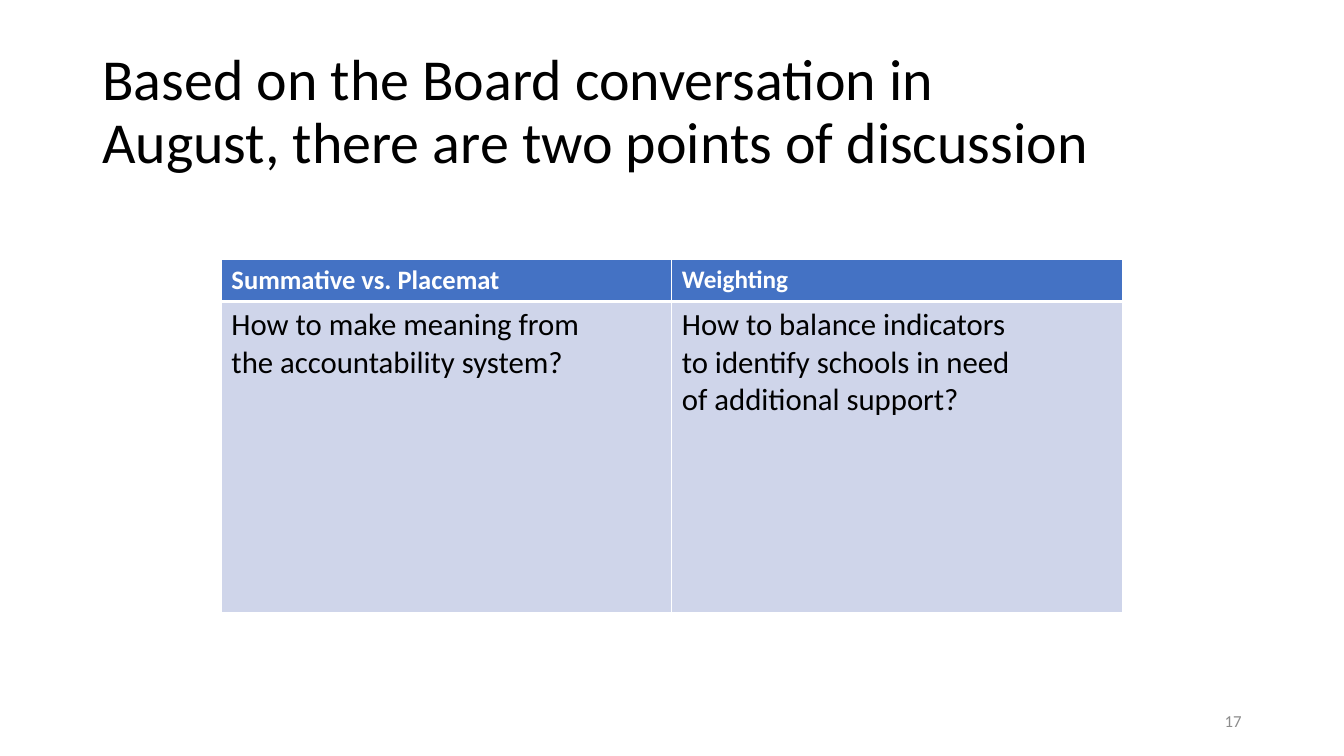
"""Build the slide on the two points of discussion."""
from dataclasses import dataclass

from lxml import etree
from pptx import Presentation
from pptx.dml.color import RGBColor
from pptx.enum.text import MSO_ANCHOR, PP_ALIGN
from pptx.oxml.ns import qn
from pptx.util import Cm, Pt

LEFT, RIGHT = PP_ALIGN.LEFT, PP_ALIGN.RIGHT
MIDDLE = MSO_ANCHOR.MIDDLE
FONT = "Calibri"
TIE, HARD = "~", chr(160)
COLORS = {
    "black": "000000",
    "white": "FFFFFF",
    "gray": "8C8C8C",
    "blue": "4472C4",
    "pale": "CFD5EA",
}
ROWS = (1.04, 7.84)
WIDTH = 11.35
THIN, THICK = 1, 3


@dataclass(frozen=True)
class Label:
    text: str
    left: float
    top: float
    width: float
    height: float
    size: float
    color: str
    align: PP_ALIGN = LEFT
    space: float = 1.0


@dataclass(frozen=True)
class Point:
    head: str
    size: float
    body: str


LABELS = (
    Label("Based on the Board conversation in August,~there are two points of discussion",
          2.33, 1.01, 29.21, 3.68, 41.4, "black", space=0.9),
    Label("17", 23.92, 17.66, 7.62, 1.01, 12, "gray", align=RIGHT),
)
POINTS = (
    Point("Summative vs. Placemat", 19,
          "How to~make~meaning from the~accountability system?"),
    Point("Weighting", 18,
          "How to balance indicators to~identify schools in need of~additional support?"),
)


def write(frame, text: str, *, size: float, color: str, bold: bool = False,
          align: PP_ALIGN = LEFT, space: float = 1.0) -> None:
    frame.word_wrap = True
    para = frame.paragraphs[0]
    para.alignment = align
    para.line_spacing = space
    run = para.add_run()
    run.text = text.replace(TIE, HARD)
    font = run.font
    font.name, font.size, font.bold = FONT, Pt(size), bold
    font.color.rgb = RGBColor.from_string(COLORS[color])


def draw_label(slide, label: Label) -> None:
    box = slide.shapes.add_textbox(Cm(label.left), Cm(label.top),
                                   Cm(label.width), Cm(label.height))
    box.text_frame.vertical_anchor = MIDDLE
    write(box.text_frame, label.text, size=label.size, color=label.color,
          align=label.align, space=label.space)


def paint(cell, fill: str, top: float, base: float) -> None:
    props = cell._tc.get_or_add_tcPr()
    for side, width in (("L", THIN), ("R", THIN), ("T", top), ("B", base)):
        line = etree.SubElement(props, qn(f"a:ln{side}"), w=str(Pt(width)))
        solid = etree.SubElement(line, qn("a:solidFill"))
        etree.SubElement(solid, qn("a:srgbClr"), val=COLORS["white"])
    cell.fill.solid()
    cell.fill.fore_color.rgb = RGBColor.from_string(COLORS[fill])


def draw_table(slide, points: tuple[Point, ...]) -> None:
    table = slide.shapes.add_table(
        len(ROWS), len(points), Cm(5.58), Cm(6.54),
        Cm(WIDTH * len(points)), Cm(sum(ROWS))).table
    table.horz_banding = False
    for row, height in zip(table.rows, ROWS):
        row.height = Cm(height)
    for col, point in enumerate(points):
        table.columns[col].width = Cm(WIDTH)
        head, body = table.cell(0, col), table.cell(1, col)
        paint(head, "blue", THIN, THICK)
        paint(body, "pale", THICK, THIN)
        write(head.text_frame, point.head, size=point.size, color="white", bold=True)
        write(body.text_frame, point.body, size=22, color="black")


def main() -> None:
    deck = Presentation()
    deck.slide_width, deck.slide_height = Cm(33.87), Cm(19.05)
    slide = deck.slides.add_slide(deck.slide_layouts[6])
    for label in LABELS:
        draw_label(slide, label)
    draw_table(slide, POINTS)
    deck.save("out.pptx")


if __name__ == "__main__":
    main()
